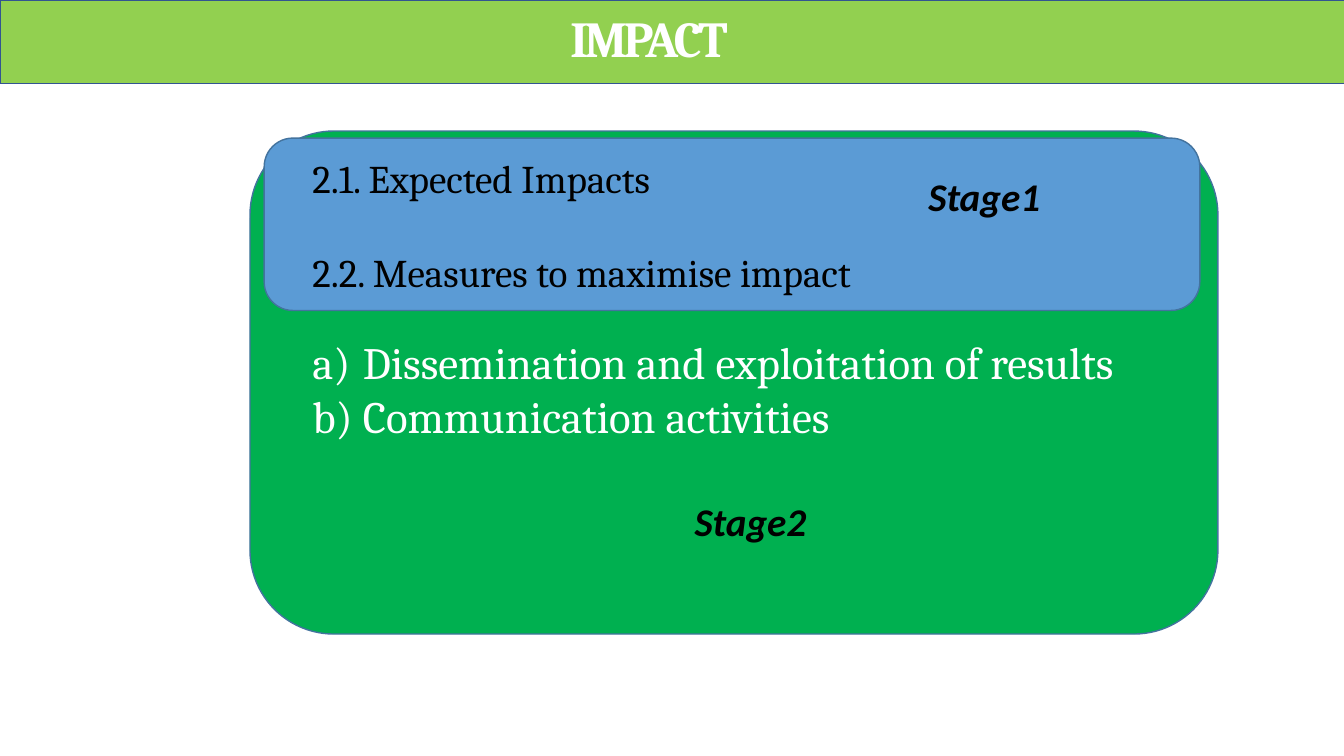
from lxml.etree import SubElement
from pptx import Presentation
from pptx.dml.color import RGBColor
from pptx.enum.shapes import MSO_SHAPE
from pptx.enum.text import MSO_ANCHOR, MSO_AUTO_SIZE, PP_ALIGN
from pptx.oxml.ns import qn
from pptx.util import Inches, Pt

THEME = {
    "stage2": "00B050", "stage1": "5B9BD5", "panel_line": "43739E",
    "banner": "92D050", "banner_line": "325491",
    "dark": "000000", "light": "FFFFFF",
    "serif": "Cambria", "sans": "Calibri",
    "title_size": 36, "item_size": 32, "heading_size": 28,
}

HEADING = {"name": THEME["serif"], "size": THEME["heading_size"], "color": THEME["dark"]}
ITEM = {"name": THEME["serif"], "size": THEME["item_size"], "color": THEME["light"]}
STAGE = {"name": THEME["sans"], "size": THEME["heading_size"], "color": THEME["dark"],
         "bold": True, "italic": True}
TITLE = {"name": THEME["serif"], "size": THEME["title_size"], "color": THEME["light"],
         "bold": True}

# preset shape, box (left, top, width, height), fill, line
PANELS = [
    (MSO_SHAPE.ROUNDED_RECTANGLE, (2.48, 1.3, 9.6, 4.99), THEME["stage2"], THEME["panel_line"]),
    (MSO_SHAPE.ROUNDED_RECTANGLE, (2.62, 1.37, 9.28, 1.71), THEME["stage1"], THEME["panel_line"]),
    (MSO_SHAPE.RECTANGLE, (0, 0, 13.49, 0.83), THEME["banner"], THEME["banner_line"]),
]

# text, font format, space before in points, lettered
OUTLINE_BOX = (3, 1.48, 8.56, 3.3)
OUTLINE = [
    ("2.1. Expected Impacts", HEADING, 0, False),
    ("2.2. Measures to maximise impact", HEADING, 34, False),
    ("Dissemination and exploitation of results", ITEM, 28, True),
    ("Communication activities", ITEM, 0, True),
]

STAGES = [
    ("Stage1", (9.11, 1.66, 1.32, 0.57)),
    ("Stage2", (6.79, 4.88, 1.32, 0.57)),
]
TITLE_BOX = (3.89, 0.07, 5.09, 0.68)


def add_panel(slide, preset, box, fill, line):
    shape = slide.shapes.add_shape(preset, *map(Inches, box))
    shape.shadow.inherit = False
    shape.fill.solid()
    shape.fill.fore_color.rgb = RGBColor.from_string(fill)
    shape.line.color.rgb = RGBColor.from_string(line)
    shape.line.width = Pt(1)


def add_text_frame(slide, box, wrap=False):
    frame = slide.shapes.add_textbox(*map(Inches, box)).text_frame
    frame.word_wrap = wrap
    frame.auto_size = MSO_AUTO_SIZE.NONE if wrap else MSO_AUTO_SIZE.SHAPE_TO_FIT_TEXT
    return frame


def write(paragraph, text, font_format):
    run = paragraph.add_run()
    run.text = text
    for attribute, value in font_format.items():
        if attribute == "color":
            run.font.color.rgb = RGBColor.from_string(value)
        else:
            setattr(run.font, attribute, Pt(value) if attribute == "size" else value)
    return run


def add_letter(paragraph):
    """Number the paragraph a), b), ... with a hanging indent."""
    properties = paragraph._p.get_or_add_pPr()
    properties.set("marL", str(Inches(0.5)))
    properties.set("indent", str(Inches(-0.5)))
    SubElement(properties, qn("a:buAutoNum"), type="alphaLcParenR")


def add_outline(slide):
    frame = add_text_frame(slide, OUTLINE_BOX)
    for index, (text, font_format, space, lettered) in enumerate(OUTLINE):
        paragraph = frame.add_paragraph() if index else frame.paragraphs[0]
        paragraph.space_before = Pt(space)
        if lettered:
            add_letter(paragraph)
        write(paragraph, text, font_format)


def add_title(slide):
    frame = add_text_frame(slide, TITLE_BOX, wrap=True)
    frame.vertical_anchor = MSO_ANCHOR.MIDDLE
    paragraph = frame.paragraphs[0]
    paragraph.alignment = PP_ALIGN.CENTER
    paragraph.line_spacing = 0.9
    run = write(paragraph, "IMPACT", TITLE)
    run.font._element.set("spc", "-250")


def main():
    presentation = Presentation()
    presentation.slide_width = Inches(13.33)
    presentation.slide_height = Inches(7.5)
    slide = presentation.slides.add_slide(presentation.slide_layouts[6])
    for panel in PANELS:
        add_panel(slide, *panel)
    add_outline(slide)
    for text, box in STAGES:
        write(add_text_frame(slide, box).paragraphs[0], text, STAGE)
    add_title(slide)
    presentation.save("out.pptx")


if __name__ == "__main__":
    main()
